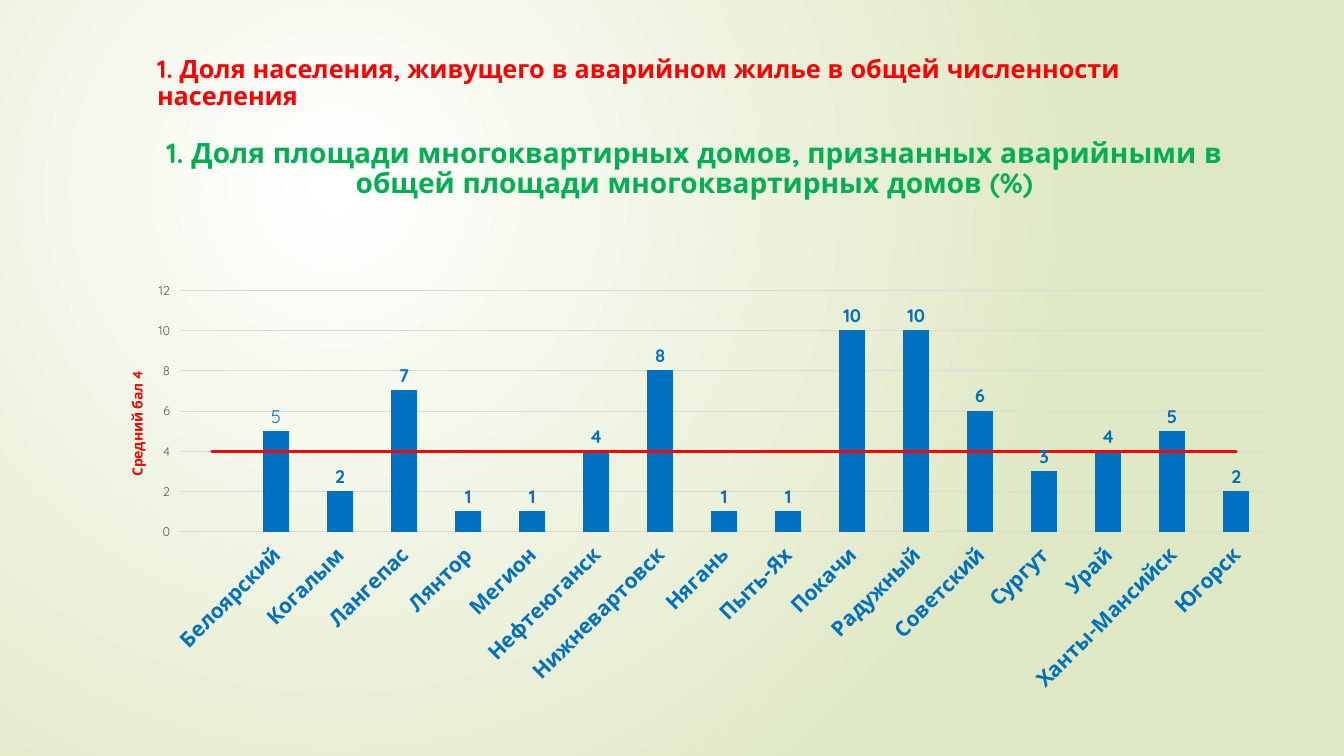
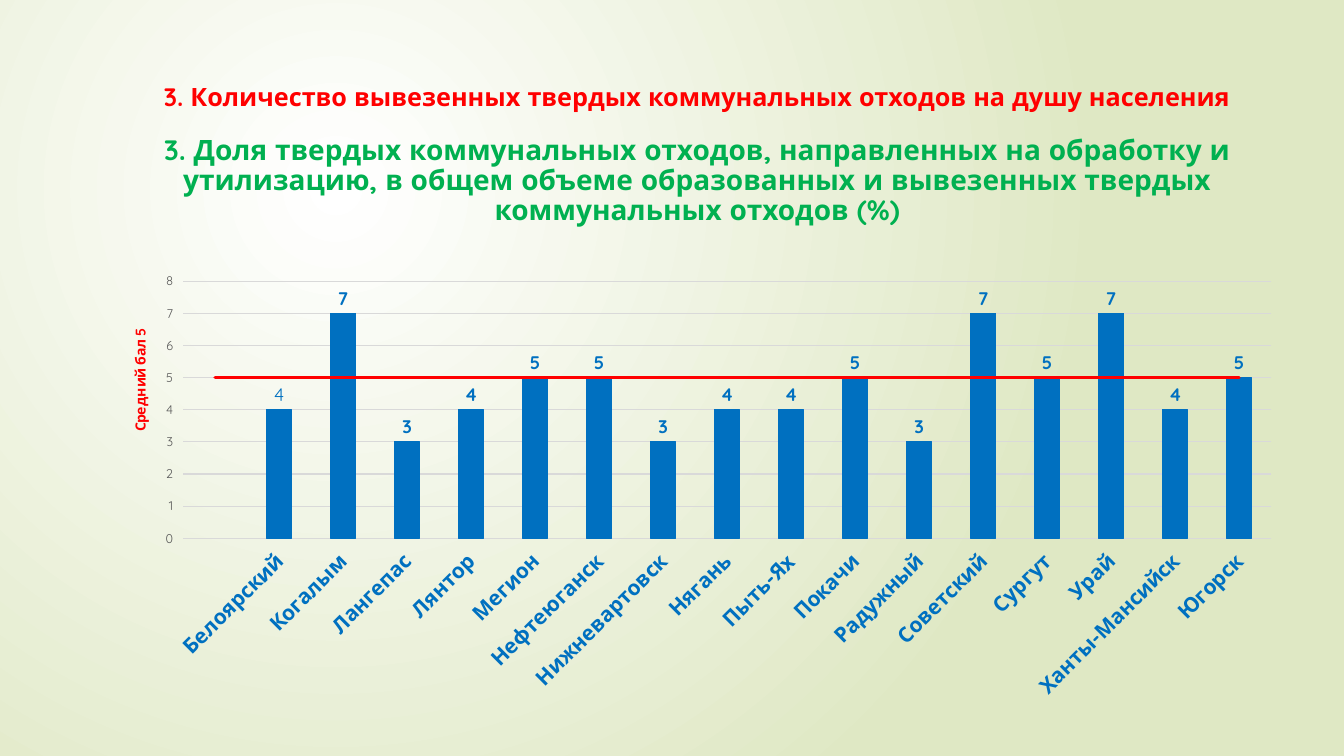
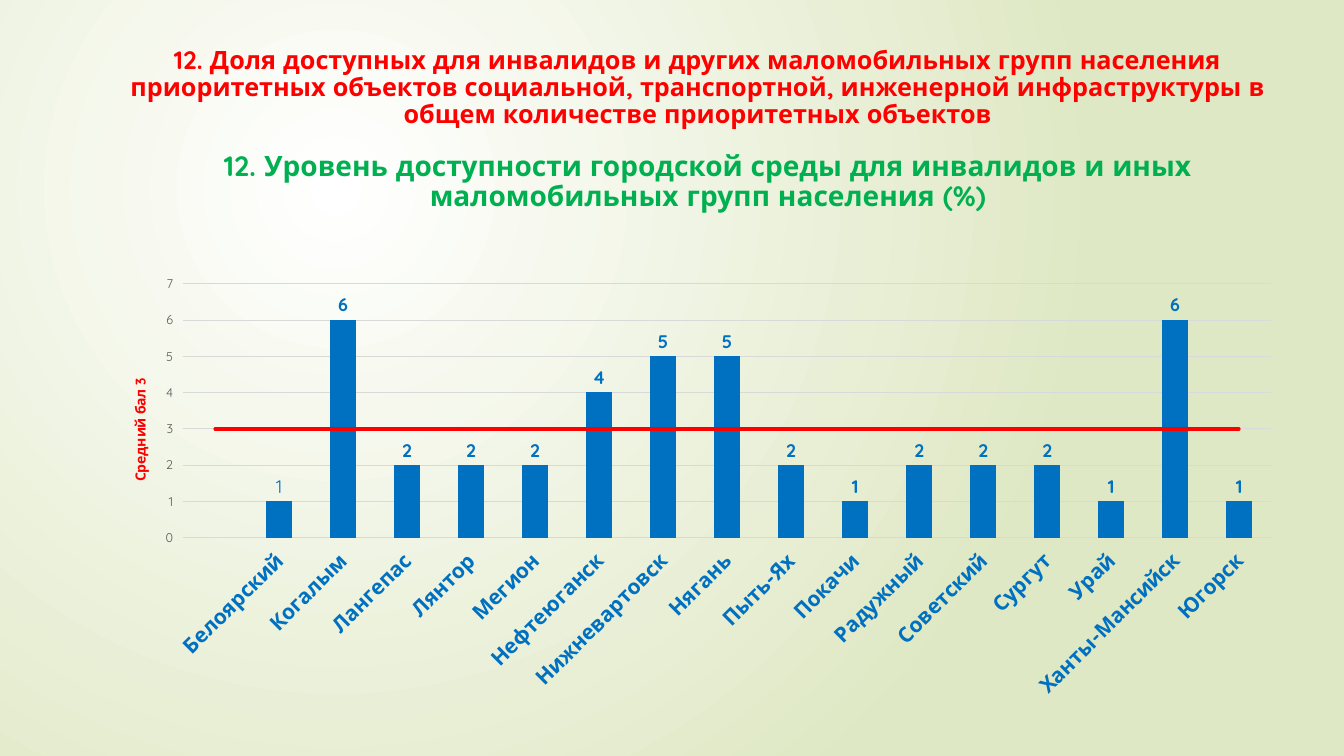
from dataclasses import dataclass

from lxml import etree
from pptx import Presentation
from pptx.chart.data import CategoryChartData
from pptx.dml.color import RGBColor
from pptx.enum import chart as ch, text as tx
from pptx.oxml import parse_xml
from pptx.oxml.ns import nsdecls, qn
from pptx.util import Inches, Pt


@dataclass(frozen=True)
class Theme:
    font: str = "Quicksand"
    red: str = "FF0000"
    green: str = "00B050"
    blue: str = "0070C0"
    gray: str = "595959"
    grid: str = "D9D9D9"
    black: str = "000000"
    glow: tuple = ("FFFFFF", "DFE8C4")
    title: int = 18
    subtitle: int = 20
    city: int = 15
    label: int = 13
    base: int = 10
    tick: int = 9


T = Theme()
LEFT, CENTER = tx.PP_ALIGN.LEFT, tx.PP_ALIGN.CENTER
TOP, MIDDLE, BOTTOM = tx.MSO_ANCHOR.TOP, tx.MSO_ANCHOR.MIDDLE, tx.MSO_ANCHOR.BOTTOM

CITIES = ["", "Белоярский", "Когалым", "Лангепас", "Лянтор", "Мегион", "Нефтеюганск",
          "Нижневартовск", "Нягань", "Пыть-Ях", "Покачи", "Радужный", "Советский",
          "Сургут", "Урай", "Ханты-Мансийск", "Югорск"]

SLIDES = [
    {
        "title": "1. Доля населения, живущего в аварийном жилье в общей численности населения",
        "title_at": (1.46, 0.58, 11.12, 0.57), "title_align": LEFT,
        "subtitle": "1. Доля площади многоквартирных домов, признанных аварийными "
                    "в общей площади многоквартирных домов (%)",
        "subtitle_at": (1.46, 1.33, 10.85, 0.94), "subtitle_anchor": TOP,
        "scores": [5, 2, 7, 1, 1, 4, 8, 1, 1, 10, 10, 6, 3, 4, 5, 2],
        "average": 4, "top": 12, "step": 2,
        "chart_at": (1.05, 2.73, 11.68, 4.19), "plot_y": 0.036, "plot_h": 0.572,
        "caption_y": 0.22,
    },
    {
        "title": "3. Количество вывезенных твердых коммунальных отходов на душу населения",
        "title_at": (1.18, 0.52, 11.47, 0.64), "title_align": CENTER,
        "subtitle": "3. Доля твердых коммунальных отходов, направленных на обработку и "
                    "утилизацию, в общем объеме образованных и вывезенных твердых "
                    "коммунальных отходов (%)",
        "subtitle_at": (1.18, 1.28, 11.47, 1.04), "subtitle_anchor": MIDDLE,
        "scores": [4, 7, 3, 4, 5, 5, 3, 4, 4, 5, 3, 7, 5, 7, 4, 5],
        "average": 5, "top": 8, "step": 1,
        "chart_at": (1.08, 2.62, 11.68, 4.36), "plot_y": 0.039, "plot_h": 0.585,
        "caption_y": 0.14,
    },
    {
        "title": "12. Доля доступных для инвалидов и других маломобильных групп населения "
                 "приоритетных объектов социальной, транспортной, инженерной "
                 "инфраструктуры в общем количестве приоритетных объектов",
        "title_at": (1.19, 0.69, 11.46, 0.64), "title_align": CENTER,
        "subtitle": "12. Уровень доступности городской среды для инвалидов и иных "
                    "маломобильных групп населения (%)",
        "subtitle_at": (1.29, 1.67, 11.46, 0.49), "subtitle_anchor": BOTTOM,
        "scores": [1, 6, 2, 2, 2, 4, 5, 5, 2, 1, 2, 2, 2, 1, 6, 1],
        "average": 3, "top": 7, "step": 1,
        "chart_at": (1.08, 2.62, 11.68, 4.36), "plot_y": 0.045, "plot_h": 0.578,
        "caption_y": 0.255,
    },
]


def rgb(value):
    return RGBColor.from_string(value)


def set_font(font, size, color, bold=False):
    font.name = T.font
    font.size = Pt(size)
    font.bold = bold
    font.color.rgb = rgb(color)


def add_text(slide, text, *, at, size, color, align=CENTER, anchor=BOTTOM):
    tf = slide.shapes.add_textbox(*map(Inches, at)).text_frame
    tf.word_wrap = True
    tf.vertical_anchor = anchor
    p = tf.paragraphs[0]
    p.alignment = align
    p.line_spacing = 0.9
    r = p.add_run()
    r.text = text
    set_font(r.font, size, color, bold=True)


def set_background(master):
    fill = master.background.fill
    fill.gradient()
    for stop, color, position in zip(fill.gradient_stops, T.glow, (0, 1)):
        stop.color.rgb = rgb(color)
        stop.position = position
    grad = master.element.find(".//" + qn("p:bgPr")).find(qn("a:gradFill"))
    for lin in grad.findall(qn("a:lin")):
        grad.remove(lin)
    grad.append(parse_xml(
        f'<a:path {nsdecls("a")} path="circle">'
        '<a:fillToRect l="50000" t="50000" r="100000" b="100000"/></a:path>'))


def set_layout(owner, index, **values):
    for old in owner.findall(qn("c:layout")):
        owner.remove(old)
    layout = etree.Element(qn("c:layout"))
    manual = etree.SubElement(layout, qn("c:manualLayout"))
    for name, value in values.items():
        etree.SubElement(manual, qn("c:" + name)).set("val", str(value))
    owner.insert(index, layout)


def move_to_line(chart):
    bars = chart.element.find(".//" + qn("c:barChart"))
    ser = bars.findall(qn("c:ser"))[1]
    for flag in ser.findall(qn("c:invertIfNegative")):
        ser.remove(flag)
    line = parse_xml(f'<c:lineChart {nsdecls("c")}><c:grouping val="standard"/>'
                     '<c:varyColors val="0"/></c:lineChart>')
    line.append(ser)
    etree.SubElement(line, qn("c:marker")).set("val", "1")
    for axis in bars.findall(qn("c:axId")):
        etree.SubElement(line, qn("c:axId")).set("val", axis.get("val"))
    bars.addnext(line)


def style_bars(plot):
    plot.gap_width = 150
    plot.vary_by_categories = False
    bars = plot.series[0]
    bars.invert_if_negative = False
    bars.format.fill.solid()
    bars.format.fill.fore_color.rgb = rgb(T.blue)
    bars.format.line.color.rgb = rgb(T.blue)
    bars.format.line.width = Pt(0.75)
    first = bars.points[1].data_label
    set_font(first.font, T.label, T.blue)
    labels = bars.data_labels
    labels.show_value = True
    set_font(labels.font, T.label, T.blue, bold=True)
    first.position = labels.position = ch.XL_LABEL_POSITION.OUTSIDE_END


def style_average(series):
    series.smooth = False
    series.marker.style = ch.XL_MARKER_STYLE.NONE
    line = series.format.line
    line.color.rgb = rgb(T.red)
    line.width = Pt(2.25)
    series.format.element.find(".//" + qn("a:ln")).set("cap", "rnd") \
        if hasattr(series.format, "element") else None


def style_axes(chart, data):
    cities, scale = chart.category_axis, chart.value_axis
    for axis, size, color, bold in ((cities, T.city, T.blue, True),
                                    (scale, T.tick, T.gray, False)):
        set_font(axis.tick_labels.font, size, color, bold)
        axis.format.line.fill.background()
    scale.minimum_scale, scale.maximum_scale = 0, data["top"]
    scale.major_unit = data["step"]
    grid = scale.major_gridlines.format.line
    grid.color.rgb = rgb(T.grid)
    grid.width = Pt(0.75)

    r = scale.axis_title.text_frame.paragraphs[0].add_run()
    r.text = f"Средний бал {data['average']}"
    set_font(r.font, T.base, T.red, bold=True)
    root = chart.element
    title = root.find(".//" + qn("c:valAx")).find(qn("c:title"))
    title.find(".//" + qn("a:bodyPr")).set("rot", "-5400000")
    city_text = root.find(".//" + qn("c:catAx")).find(qn("c:txPr"))
    city_text.find(qn("a:bodyPr")).set("rot", "-2700000")
    set_layout(title, 1, xMode="edge", yMode="edge", x=0.016, y=data["caption_y"])


def add_score_chart(slide, data):
    cd = CategoryChartData()
    cd.categories = CITIES
    cd.add_series("Series 1", [None] + data["scores"])
    cd.add_series("Series 2", [data["average"]] * len(CITIES))
    chart = slide.shapes.add_chart(ch.XL_CHART_TYPE.COLUMN_CLUSTERED,
                                   *map(Inches, data["chart_at"]), cd).chart
    chart.has_legend = chart.has_title = False
    set_font(chart.font, T.base, T.black)
    move_to_line(chart)
    style_bars(chart.plots[0])
    style_average(chart.plots[1].series[0])
    for ln in chart.element.find(".//" + qn("c:lineChart")).iter(qn("a:ln")):
        ln.set("cap", "rnd")
    style_axes(chart, data)
    set_layout(chart.element.find(".//" + qn("c:plotArea")), 0, layoutTarget="inner",
               xMode="edge", yMode="edge", x=0.063, y=data["plot_y"],
               w=0.924, h=data["plot_h"])


def main():
    prs = Presentation()
    prs.slide_width, prs.slide_height = Inches(13.33), Inches(7.5)
    set_background(prs.slide_master)
    for data in SLIDES:
        slide = prs.slides.add_slide(prs.slide_layouts[6])
        add_score_chart(slide, data)
        add_text(slide, data["title"], at=data["title_at"], size=T.title,
                 color=T.red, align=data["title_align"])
        add_text(slide, data["subtitle"], at=data["subtitle_at"], size=T.subtitle,
                 color=T.green, anchor=data["subtitle_anchor"])
    prs.save("out.pptx")


if __name__ == "__main__":
    main()
